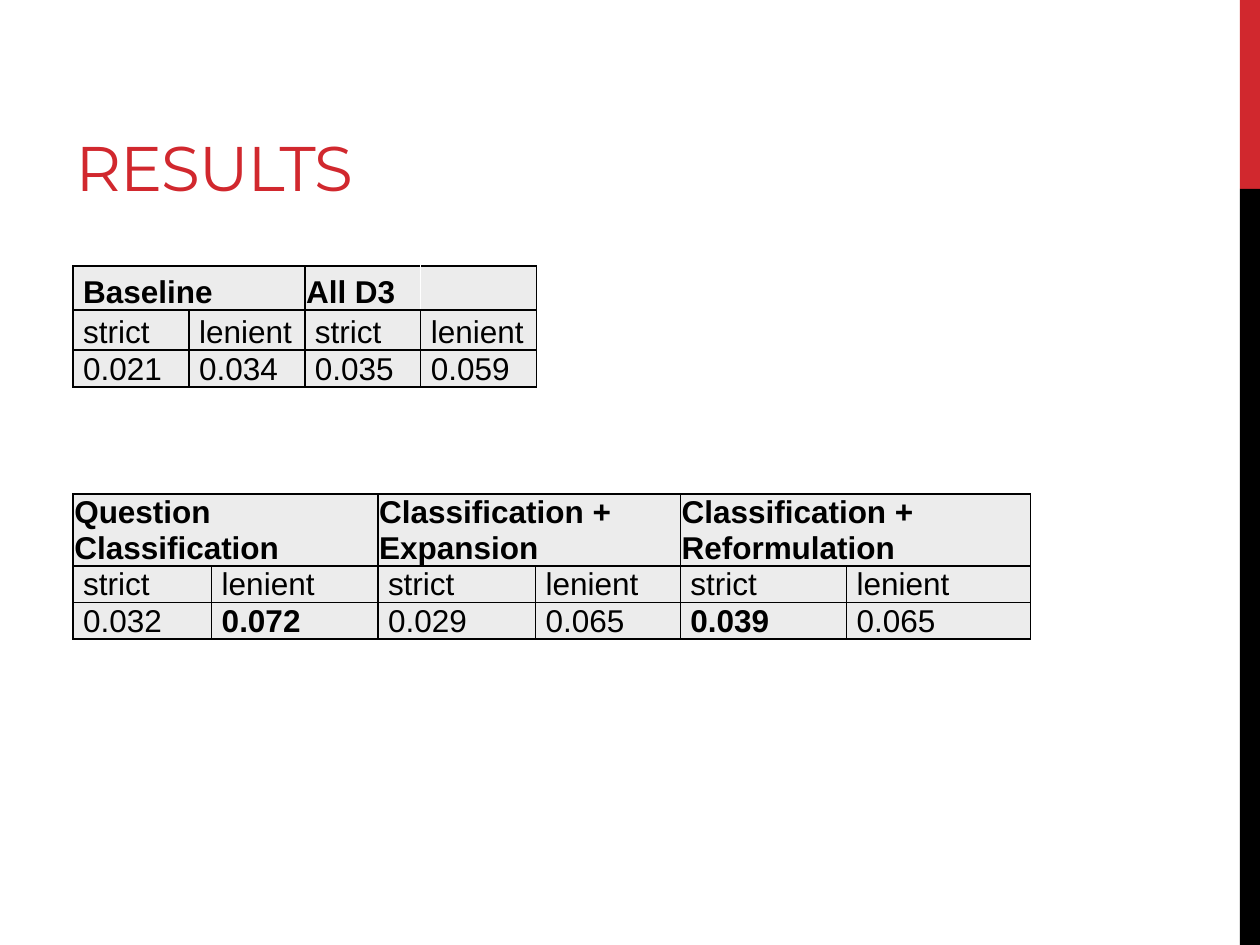
from lxml import etree
from pptx import Presentation
from pptx.dml.color import RGBColor
from pptx.enum.shapes import MSO_SHAPE
from pptx.enum.text import MSO_ANCHOR, MSO_AUTO_SIZE, PP_ALIGN
from pptx.oxml.ns import qn
from pptx.util import Inches, Pt

RED = RGBColor(0xD1, 0x28, 0x2E)
BLACK = RGBColor(0, 0, 0)
WHITE = RGBColor(0xFF, 0xFF, 0xFF)
GRAY = RGBColor(0xEC, 0xEC, 0xEC)
RECT = MSO_SHAPE.RECTANGLE
BOTTOM = MSO_ANCHOR.BOTTOM
LEFT = PP_ALIGN.LEFT
FIXED = MSO_AUTO_SIZE.NONE
INSET = 0.01
INDENT = 0.08

BASE_ROWS = [
    ["Baseline", None, "All D3", ""],
    ["strict", "lenient"] * 2,
    ["0.021", "0.034", "0.035", "0.059"],
]
CLASS_ROWS = [
    ["Question Classification", None, "Classification + Expansion", None,
     "Classification + Reformulation", None],
    ["strict", "lenient"] * 3,
    ["0.032", "0.072", "0.029", "0.065", "0.039", "0.065"],
]
BEST = ("0.072", "0.039")


def add_bar(slide, top, height, color):
    bar = slide.shapes.add_shape(RECT, Inches(9.84), Inches(top),
                                 Inches(0.16), Inches(height))
    bar.shadow.inherit = False
    bar.fill.solid()
    bar.fill.fore_color.rgb = color
    bar.line.fill.background()


def style_font(font, name, size, color, bold=False):
    font.name = name
    font.size = Pt(size)
    font.color.rgb = color
    font.bold = bold


def set_title(slide, text):
    title = slide.shapes.title
    title.left, title.top = Inches(0.5), Inches(0.17)
    title.width, title.height = Inches(6.33), Inches(1.5)
    frame = title.text_frame
    frame.text = text
    frame.auto_size = FIXED
    frame.vertical_anchor = BOTTOM
    para = frame.paragraphs[0]
    para.alignment = LEFT
    run = para.runs[0]
    style_font(run.font, "Montserrat", 36, RED)
    run.font._element.set("spc", "-60")


def set_borders(cell, white=""):
    """Draw black cell edges, except the side letters listed in white."""
    props = cell._tc.get_or_add_tcPr()
    for side in "LRTB":
        line = etree.SubElement(props, qn("a:ln" + side), w=str(Pt(1)))
        fill = etree.SubElement(line, qn("a:solidFill"))
        color = WHITE if side in white else BLACK
        etree.SubElement(fill, qn("a:srgbClr"), val=str(color))


def style_cell(cell, text, bold, indent, white):
    set_borders(cell, white)
    cell.fill.solid()
    cell.fill.fore_color.rgb = GRAY
    cell.margin_left = Inches(indent)
    cell.margin_right = cell.margin_top = Inches(INSET)
    cell.margin_bottom = 0
    cell.vertical_anchor = BOTTOM
    cell.text_frame.text = text
    para = cell.text_frame.paragraphs[0]
    style_font(para.font, "Arial", 18, BLACK, bold)
    for run in para.runs:
        style_font(run.font, "Arial", 18, BLACK, bold)


def add_grid(slide, top, widths, heights, rows, indented=(), white=None):
    """Add a table; None in a row continues the cell to its left."""
    white = white or {}
    frame = slide.shapes.add_table(
        len(rows), len(widths), Inches(0.58), Inches(top),
        Inches(sum(widths)), Inches(sum(heights)))
    grid = frame.table
    grid.first_row = grid.horz_banding = False
    for col, width in zip(grid.columns, widths):
        col.width = Inches(width)
    for row, height in zip(grid.rows, heights):
        row.height = Inches(height)
    for r, row in enumerate(rows):
        for c, text in enumerate(row):
            bold = r == 0 or text in BEST
            indent = INDENT if r or text in indented else INSET
            style_cell(grid.cell(r, c), text or "", bold, indent,
                       white.get((r, c), ""))
            if text is None:
                grid.cell(r, c - 1).merge(grid.cell(r, c))


def main():
    deck = Presentation()
    deck.slide_width, deck.slide_height = Inches(10), Inches(7.5)
    slide = deck.slides.add_slide(deck.slide_layouts[5])
    add_bar(slide, 0, 1.5, RED)
    add_bar(slide, 1.5, 6, BLACK)
    set_title(slide, "RESULTS")
    add_grid(slide, 2.11, [0.92] * 4, [0.35, 0.32, 0.29], BASE_ROWS,
             indented=("Baseline",), white={(0, 2): "R", (0, 3): "L"})
    add_grid(slide, 3.92, [1.1, 1.32, 1.25, 1.15, 1.32, 1.46],
             [0.57, 0.29, 0.29], CLASS_ROWS)
    deck.save("out.pptx")


if __name__ == "__main__":
    main()
